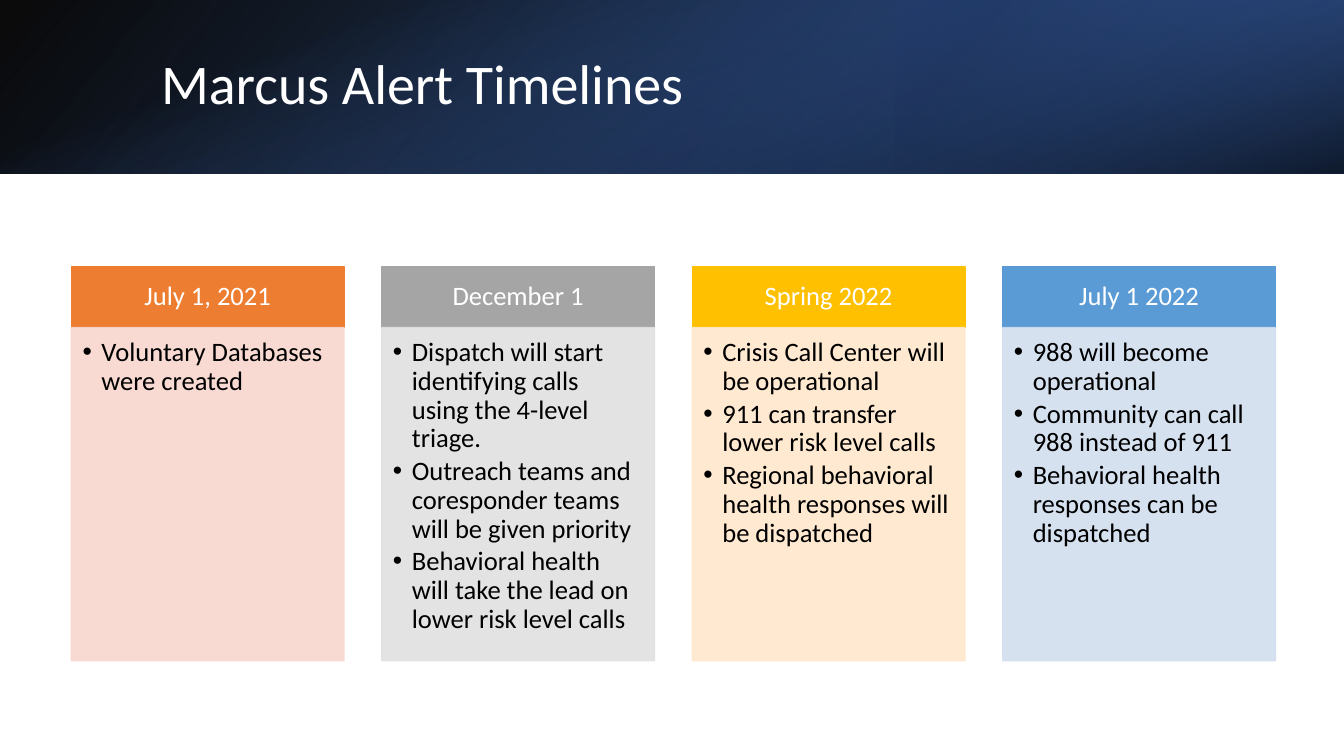
from dataclasses import dataclass

from lxml import etree
from pptx import Presentation
from pptx.dml.color import RGBColor
from pptx.enum import shapes, text
from pptx.oxml import ns, parse_xml
from pptx.util import Pt


@dataclass(frozen=True)
class Theme:
    font: str = "Calibri"
    title_size: float = 40
    card_size: float = 19
    light: str = "FFFFFF"
    dark: str = "000000"
    navy: str = "203864"
    deep_blue: str = "2F5597"
    blue: str = "4472C4"
    card_opacity: int = 90


THEME = Theme()
PAGE_WIDTH, PAGE_HEIGHT = 960, 540
BANNER_HEIGHT = 124

# Heading, heading colour, body colour, bullets
CARDS = [
    ("July 1, 2021", "ED7D31", "F8D7CE", ["Voluntary Databases were created"]),
    ("December 1", "A5A5A5", "E1E1E1", [
        "Dispatch will start identifying calls using the 4-level triage.",
        "Outreach teams and coresponder teams will be given priority",
        "Behavioral health will take the lead on lower risk level calls"]),
    ("Spring 2022", "FFC000", "FFE8CC", [
        "Crisis Call Center will be operational",
        "911 can transfer lower risk level calls",
        "Regional behavioral health responses will be dispatched"]),
    ("July 1 2022", "5B9BD5", "D2DEEF", [
        "988 will become operational",
        "Community can call 988 instead of 911",
        "Behavioral health responses can be dispatched"]),
]


def add_box(page, box):
    shape = page.shapes.add_shape(shapes.MSO_SHAPE.RECTANGLE, *map(Pt, box))
    shape.shadow.inherit = False
    return shape


def set_alpha(fill_element, percent):
    color = fill_element.find(ns.qn("a:srgbClr"))
    etree.SubElement(color, ns.qn("a:alpha"), val=str(percent * 1000))


def add_gradient(page, box, stops, angle, rotation=0, flip=False):
    """Add a borderless box; each stop is (position, colour, opacity), in percent."""
    shape = add_box(page, box)
    shape.line.fill.background()
    shape.rotation = rotation
    properties = shape._element.spPr
    if flip:
        properties.xfrm.set("flipH", "1")
    stop_xml = "".join(
        f'<a:gs pos="{place * 1000}"><a:srgbClr val="{color}">'
        f'<a:alpha val="{opacity * 1000}"/></a:srgbClr></a:gs>'
        for place, color, opacity in stops)
    gradient = parse_xml(
        f'<a:gradFill {ns.nsdecls("a")} rotWithShape="1"><a:gsLst>{stop_xml}</a:gsLst>'
        f'<a:lin ang="{angle * 60000}" scaled="0"/></a:gradFill>')
    properties.find(ns.qn("a:prstGeom")).addnext(gradient)


def set_frame(frame, anchor, insets):
    frame.word_wrap = True
    frame.vertical_anchor = anchor
    (frame.margin_left, frame.margin_top,
     frame.margin_right, frame.margin_bottom) = map(Pt, insets)


def write(para, words, size, color, align=text.PP_ALIGN.LEFT):
    para.alignment = align
    para.line_spacing = 0.9
    span = para.add_run()
    span.text = words
    span.font.name = THEME.font
    span.font.size = Pt(size)
    span.font.color.rgb = RGBColor.from_string(color)


def add_bullet(para):
    properties = para._p.get_or_add_pPr()
    properties.set("marL", str(Pt(13.5)))
    properties.set("indent", str(-Pt(13.5)))
    etree.SubElement(properties, ns.qn("a:buFont"), typeface="Arial")
    etree.SubElement(properties, ns.qn("a:buChar"), char="•")


def add_banner(page, box):
    left, top, width, height = box
    add_gradient(page, box, [(0, THEME.dark, 96), (100, THEME.deep_blue, 100)],
                 140, flip=True)
    add_gradient(page, (left + width * 2 / 3, top, width / 3, height),
                 [(19, THEME.navy, 68), (100, THEME.blue, 79)],
                 320, rotation=180, flip=True)
    # A quarter turn about the centre makes this upright box cover the banner.
    upright = (left + (width - height) / 2, top + (height - width) / 2, height, width)
    add_gradient(page, upright, [(23, THEME.blue, 0), (99, THEME.dark, 74)],
                 340, rotation=90)
    title = page.shapes.add_textbox(
        *map(Pt, (left + 108, top + 27.5, 790.5, 69)))
    set_frame(title.text_frame, text.MSO_ANCHOR.MIDDLE, (7.2, 3.6, 7.2, 3.6))
    write(title.text_frame.paragraphs[0], "Marcus Alert Timelines",
          THEME.title_size, THEME.light)


def add_panel(page, box, color, opacity=100):
    panel = add_box(page, box)
    panel.line.width = Pt(1)
    for fill in (panel.fill, panel.line.fill):
        fill.solid()
        fill.fore_color.rgb = RGBColor.from_string(color)
    if opacity < 100:
        for element in list(panel._element.spPr.iter(ns.qn("a:solidFill"))):
            set_alpha(element, opacity)
    return panel


def add_card(page, box, heading, heading_color, body_color, bullets):
    left, top, width, height = box
    heading_height = 43.5
    header = add_panel(page, (left, top, width, heading_height), heading_color)
    set_frame(header.text_frame, text.MSO_ANCHOR.MIDDLE, (10.8, 5.8, 10.8, 5.8))
    write(header.text_frame.paragraphs[0], heading, THEME.card_size, THEME.light,
          text.PP_ALIGN.CENTER)

    body = add_panel(page, (left, top + heading_height, width, height - heading_height),
                     body_color, THEME.card_opacity)
    frame = body.text_frame
    set_frame(frame, text.MSO_ANCHOR.TOP, (8, 8, 10.8, 12))
    for index, words in enumerate(bullets):
        para = frame.add_paragraph() if index else frame.paragraphs[0]
        add_bullet(para)
        para.space_after = Pt(2.85)
        write(para, words, THEME.card_size, THEME.dark)


def add_timeline(page, box):
    left, top, width, height = box
    gap = 27
    card_width = (width - gap * (len(CARDS) - 1)) / len(CARDS)
    for index, card in enumerate(CARDS):
        add_card(page, (left + index * (card_width + gap), top, card_width, height), *card)


def main():
    deck = Presentation()
    deck.slide_width, deck.slide_height = Pt(PAGE_WIDTH), Pt(PAGE_HEIGHT)
    page = deck.slides.add_slide(deck.slide_layouts[6])
    add_banner(page, (0, 0, PAGE_WIDTH, BANNER_HEIGHT))
    add_timeline(page, (51, 190.5, 860, 281.5))
    deck.save("out.pptx")


if __name__ == "__main__":
    main()
